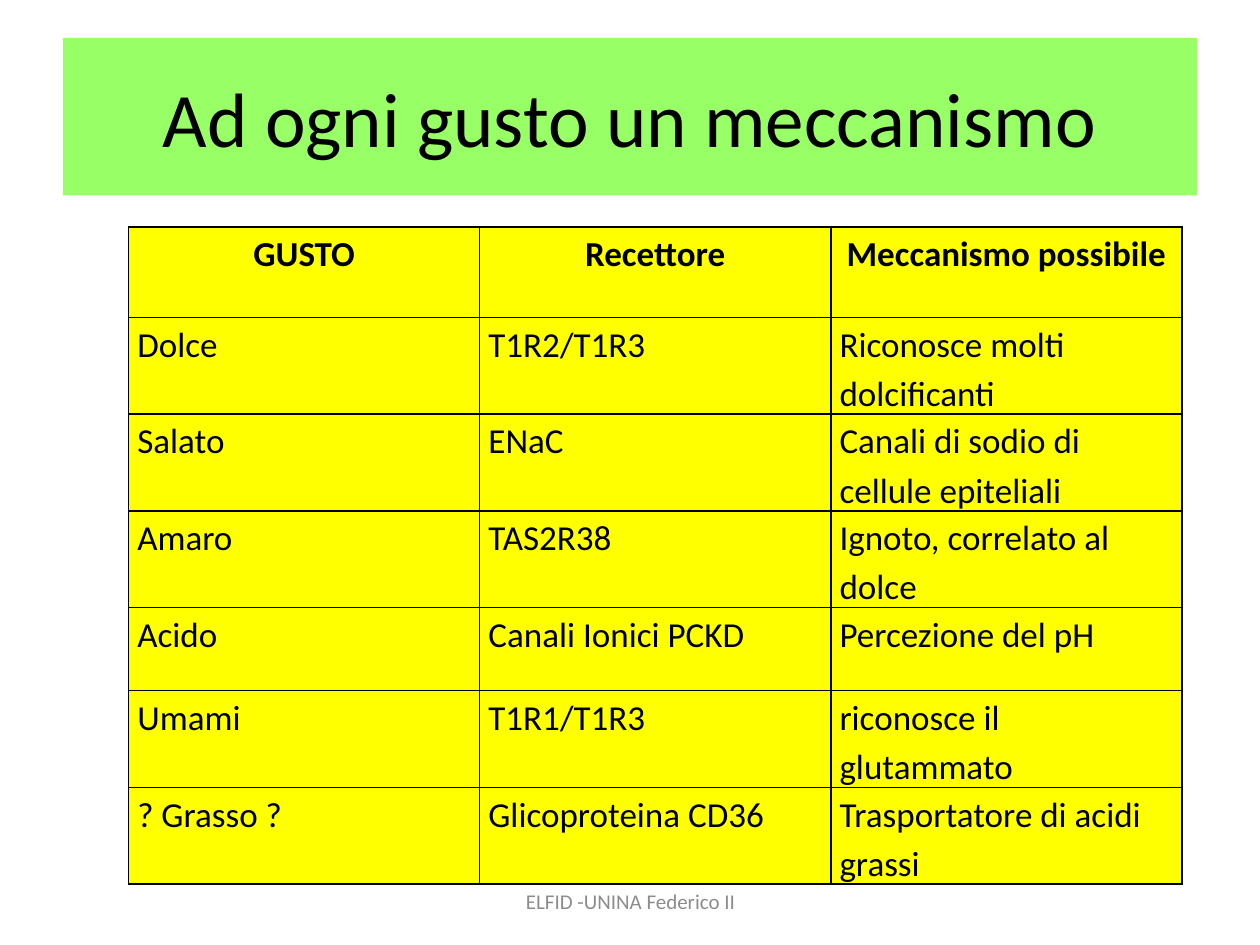
from typing import NamedTuple

from lxml.etree import SubElement
from pptx import Presentation
from pptx.dml.color import RGBColor
from pptx.enum.shapes import MSO_SHAPE as Shape
from pptx.enum.text import MSO_ANCHOR as Anchor, PP_ALIGN as Align
from pptx.oxml.ns import qn
from pptx.util import Inches, Pt

BLACK = RGBColor(0x00, 0x00, 0x00)
GREY = RGBColor(0x8C, 0x8C, 0x8C)
GREEN = RGBColor(0x99, 0xFF, 0x66)
YELLOW = RGBColor(0xFF, 0xFF, 0x00)
FONT = "Calibri"
PAGE_WIDTH, PAGE_HEIGHT = Inches(10), Inches(7.5)


class Area(NamedTuple):
    """A rectangle given as shares of the slide's width and height."""
    left: float
    top: float
    width: float
    height: float

    def lengths(self) -> tuple[int, int, int, int]:
        return (round(self.left * PAGE_WIDTH), round(self.top * PAGE_HEIGHT),
                round(self.width * PAGE_WIDTH), round(self.height * PAGE_HEIGHT))


class Taste(NamedTuple):
    name: str
    receptor: str
    mechanism: str


HEADER = Taste("GUSTO", "Recettore", "Meccanismo possibile")
TASTES = [
    Taste("Dolce", "T1R2/T1R3", "Riconosce molti dolcificanti"),
    Taste("Salato", "ENaC", "Canali di sodio di cellule epiteliali"),
    Taste("Amaro", "TAS2R38", "Ignoto, correlato al dolce"),
    Taste("Acido", "Canali Ionici PCKD", "Percezione del pH"),
    Taste("Umami", "T1R1/T1R3", "riconosce il glutammato"),
    Taste("? Grasso ?", "Glicoproteina CD36", "Trasportatore di acidi grassi"),
]
HEADER_HEIGHT, ROW_HEIGHT = Inches(0.72), Inches(0.66)


def write(frame, text: str, size: int, color: RGBColor, align: Align, bold: bool = False):
    frame.word_wrap = True
    para = frame.paragraphs[0]
    para.text = text
    para.alignment = align
    para.font.name = FONT
    para.font.size = Pt(size)
    para.font.bold = bold
    para.font.color.rgb = color
    return para


def add_label(page, area: Area, text: str, size: int, color: RGBColor, fill=None) -> None:
    """Add a centred line of text, on a filled rectangle if a fill is given."""
    if fill is None:
        box = page.shapes.add_textbox(*area.lengths())
    else:
        box = page.shapes.add_shape(Shape.RECTANGLE, *area.lengths())
        box.shadow.inherit = False
        box.fill.solid()
        box.fill.fore_color.rgb = fill
        box.line.fill.background()
    box.text_frame.vertical_anchor = Anchor.MIDDLE
    write(box.text_frame, text, size, color, Align.CENTER)


def add_borders(cell) -> None:
    properties = cell._tc.get_or_add_tcPr()
    for position, side in enumerate(("lnL", "lnR", "lnT", "lnB")):
        line = SubElement(properties, qn(f"a:{side}"), w=str(Pt(1)))
        fill = SubElement(line, qn("a:solidFill"))
        SubElement(fill, qn("a:srgbClr"), val=str(BLACK))
        properties.insert(position, line)  # borders come before the cell's fill


def fill_cell(cell, text: str, is_header: bool) -> None:
    cell.fill.solid()
    cell.fill.fore_color.rgb = YELLOW
    cell.margin_left = cell.margin_right = Inches(0.07)
    cell.margin_top = cell.margin_bottom = 0
    align = Align.CENTER if is_header else Align.LEFT
    para = write(cell.text_frame, text, 20, BLACK, align, is_header)
    para.line_spacing = 1.15
    para.space_after = Pt(10)
    add_borders(cell)


def add_taste_table(page, area: Area) -> None:
    rows = [HEADER, *TASTES]
    table = page.shapes.add_table(len(rows), len(HEADER), *area.lengths()).table
    table.horz_banding = False
    for row_index, taste in enumerate(rows):
        is_header = row_index == 0
        table.rows[row_index].height = HEADER_HEIGHT if is_header else ROW_HEIGHT
        for column_index, text in enumerate(taste):
            fill_cell(table.cell(row_index, column_index), text, is_header)


def main() -> None:
    deck = Presentation()
    deck.slide_width, deck.slide_height = PAGE_WIDTH, PAGE_HEIGHT
    page = deck.slides.add_slide(deck.slide_layouts[6])

    # Title band
    add_label(page, Area(0.05, 0.04, 0.9, 1 / 6), "Ad ogni gusto un meccanismo",
              44, BLACK, GREEN)
    # Footer
    add_label(page, Area(0.342, 0.927, 0.317, 0.053), "ELFID -UNINA Federico II", 12, GREY)
    # Tastes, receptors and mechanisms
    add_taste_table(page, Area(0.102, 0.24, 0.836, 0.624))

    deck.save("out.pptx")


if __name__ == "__main__":
    main()
